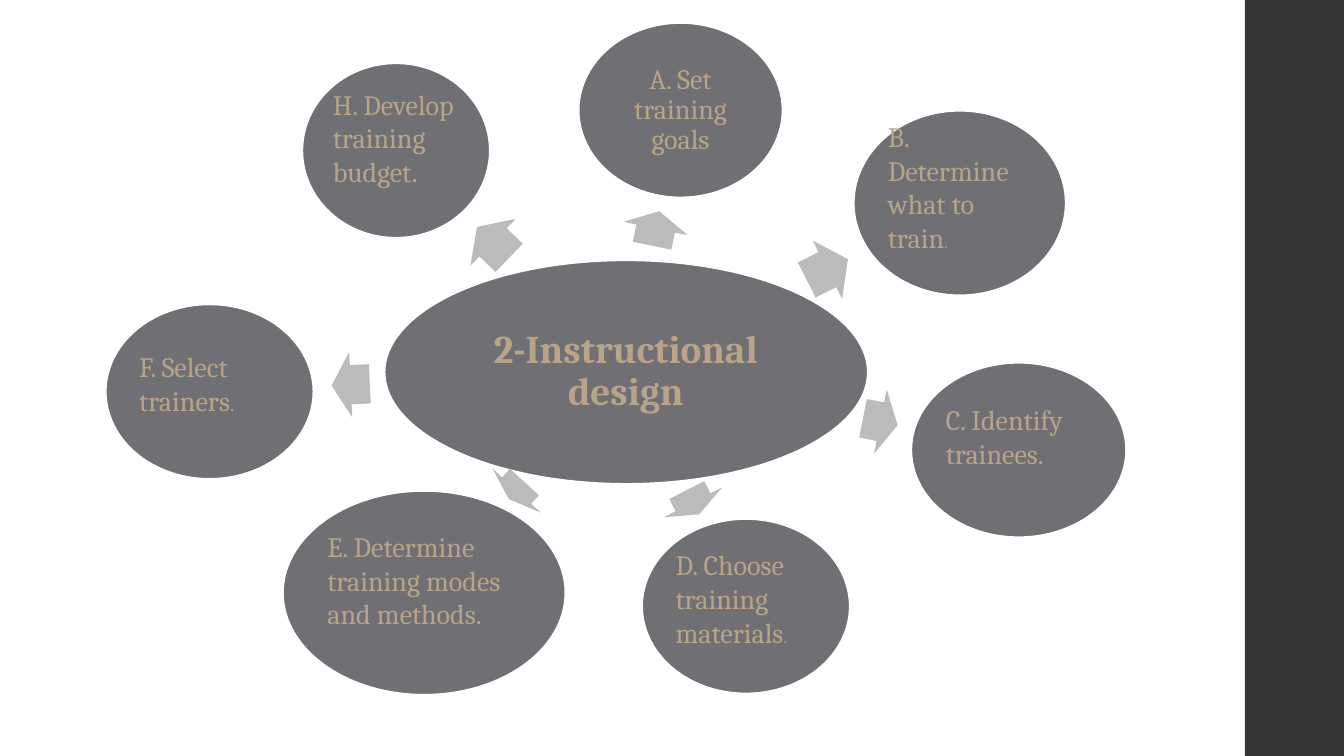
from dataclasses import dataclass

from pptx import Presentation
from pptx.dml.color import RGBColor
from pptx.enum.shapes import MSO_SHAPE
from pptx.enum.text import MSO_ANCHOR, MSO_AUTO_SIZE, PP_ALIGN
from pptx.util import Inches, Pt


@dataclass(frozen=True)
class Theme:
    font: str = "Cambria"
    strip: str = "353537"
    bubble: str = "6F6F74"
    outline: str = "FFFFFF"
    arrow: str = "BBBBBC"
    text: str = "B9A489"
    title_size: int = 28
    label_size: int = 20
    outline_width: float = 1.1


class Deck:
    """Style and current slide; lengths are cells of a 32 x 18 grid."""
    COLUMNS, ROWS = 32, 18

    def __init__(self, theme):
        self.theme = theme
        self.prs = Presentation()
        self.prs.slide_width, self.prs.slide_height = Inches(13.33), Inches(7.5)
        self.s = self.prs.slides.add_slide(self.prs.slide_layouts[5])

    def col(self, n):
        return int(self.prs.slide_width * n / self.COLUMNS)

    def row(self, n):
        return int(self.prs.slide_height * n / self.ROWS)

    def box(self, x, y, w, h):
        return self.col(x), self.row(y), self.col(w), self.row(h)

    def shape(self, kind, box, fill):
        sp = self.s.shapes.add_shape(kind, *self.box(*box))
        sp.shadow.inherit = False
        sp.fill.solid()
        sp.fill.fore_color.rgb = RGBColor.from_string(fill)
        sp.line.fill.background()
        return sp

    def frame(self, tf, inset, lift=0):
        tf.word_wrap = True
        tf.auto_size = MSO_AUTO_SIZE.NONE
        tf.vertical_anchor = MSO_ANCHOR.MIDDLE
        tf.margin_left = tf.margin_right = tf.margin_top = Inches(inset)
        tf.margin_bottom = Inches(inset) + self.row(2 * lift)

    def style(self, r, size, bold=False):
        r.font.name = self.theme.font
        r.font.size = Pt(size)
        r.font.bold = bold
        r.font.color.rgb = RGBColor.from_string(self.theme.text)

    def bubble(self, box):
        sp = self.shape(MSO_SHAPE.OVAL, box, self.theme.bubble)
        sp.line.color.rgb = RGBColor.from_string(self.theme.outline)
        sp.line.width = Pt(self.theme.outline_width)
        return sp

    def step(self, box, label, lift=0, dot_size=None):
        """Bubble with a label; lift raises the text, dot_size ends it with a small stop."""
        tf = self.bubble(box).text_frame
        self.frame(tf, 0.03, lift)
        p = tf.paragraphs[0]
        p.text = label
        p.alignment = PP_ALIGN.LEFT if lift else PP_ALIGN.CENTER
        p.line_spacing = 1.0 if lift else 0.9
        self.style(p.runs[0], self.theme.label_size)
        if dot_size:
            r = p.add_run()
            r.text = "."
            self.style(r, dot_size)

    def arrow(self, x, y, length, angle, width=1.56):
        box = (x - length / 2, y - width / 2, length, width)
        sp = self.shape(MSO_SHAPE.RIGHT_ARROW, box, self.theme.arrow)
        sp.adjustments[0], sp.adjustments[1] = 0.6, 0.5
        sp.rotation = angle

    def title(self, box, text):
        sp = self.s.shapes.title
        sp.left, sp.top, sp.width, sp.height = self.box(*box)
        self.frame(sp.text_frame, 0.04)
        p = sp.text_frame.paragraphs[0]
        p.text = text
        p.alignment = PP_ALIGN.CENTER
        p.line_spacing = 0.9
        self.style(p.runs[0], self.theme.title_size, bold=True)
        self.s.shapes._spTree.append(sp._element)  # in front of the hub


# Each step: arrow (centre x, centre y, length, angle), bubble box, label, lift, stop size
STEPS = [
    ((11.74, 5.77, 1.06, 224), (7.2, 1.51, 4.46, 4.15),
     "H. Develop training budget.", 0.31, None),
    ((15.61, 5.44, 0.84, 281.7), (13.78, 0.55, 4.85, 4.15),
     "A. Set training goals", 0, None),
    ((19.7, 6.42, 1.1, 333.2), (20.33, 2.64, 5.04, 4.39),
     "B. Determine what to train", 0.39, 12),
    ((20.96, 10.04, 0.84, 11.2), (21.7, 8.64, 5.11, 4.15),
     "C. Identify trainees.", 0.32, None),
    ((16.5, 11.96, 0.65, 62.9), (15.29, 12.36, 4.94, 4.15),
     "D. Choose training materials", 0.19, 13),
    ((12.3, 11.68, 0.55, 132.5), (6.74, 11.69, 6.72, 4.85),
     "E. Determine training modes and methods.", 0.31, None),
    ((8.35, 9.16, 0.91, 177.3), (2.52, 7.25, 4.94, 4.15),
     "F. Select trainers", 0.2, 14),
]


def main():
    theme = Theme()
    deck = Deck(theme)

    # Side strip
    deck.shape(MSO_SHAPE.RECTANGLE, (29.64, 0, 2.36, 18), theme.strip)

    # Hub with the slide title
    deck.bubble((9.16, 6.2, 11.5, 5.32))
    deck.title((10.82, 6.96, 8.16, 3.79), "2-Instructional design")

    # Steps around the hub
    for arrow, box, label, lift, dot_size in STEPS:
        deck.arrow(*arrow)
        deck.step(box, label, lift, dot_size)

    deck.prs.save("out.pptx")


if __name__ == "__main__":
    main()
